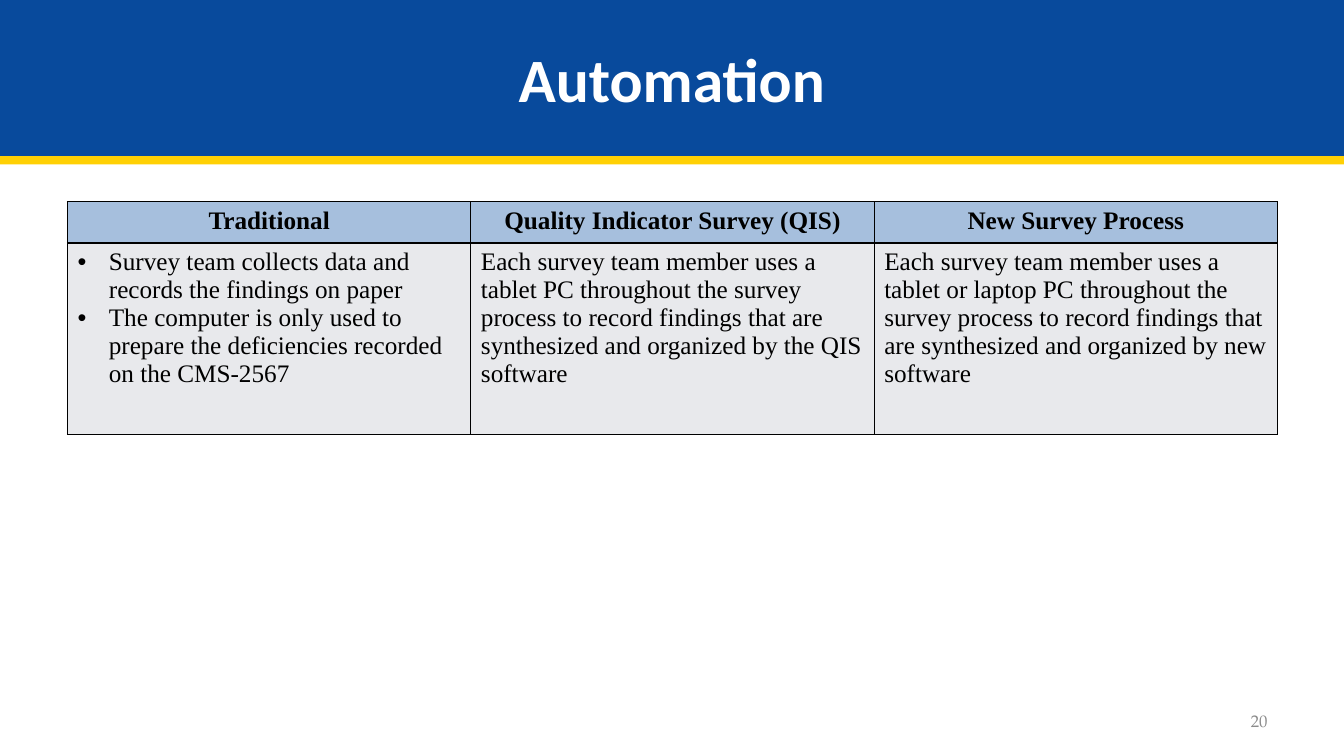
import pptx
import pptx.util
import pptx.dml.color
import pptx.enum.shapes
import pptx.enum.text
import pptx.oxml
import pptx.oxml.ns

Inches = pptx.util.Inches
Pt = pptx.util.Pt
ALIGN = pptx.enum.text.PP_ALIGN
MIDDLE = pptx.enum.text.MSO_ANCHOR.MIDDLE

COLOURS = {
    "banner": "084A9C",
    "stripe": "FFD004",
    "header": "A6BFDD",
    "body": "E8E9EC",
    "ink": "000000",
    "white": "FFFFFF",
    "number": "8C8C8C",
}
TITLE_FORMAT = {"name": "Calibri", "size": Pt(44), "bold": True}
HEADER_FORMAT = {"name": "Times New Roman", "size": Pt(18), "bold": True}
BODY_FORMAT = {**HEADER_FORMAT, "bold": False}
NUMBER_FORMAT = {"name": "TeX Gyre Pagella", "size": Pt(12), "bold": False}

SURVEYS = {
    "Traditional": [
        "Survey team collects data and records the findings on paper",
        "The computer is only used to prepare the deficiencies recorded on the CMS-2567",
    ],
    "Quality Indicator Survey (QIS)": [
        "Each survey team member uses a tablet PC throughout the survey process "
        "to record findings that are synthesized and organized by the QIS software",
    ],
    "New Survey Process": [
        "Each survey team member uses a tablet or laptop PC throughout the survey process "
        "to record findings that are synthesized and organized by new software",
    ],
}


def colour(name):
    return pptx.dml.color.RGBColor.from_string(COLOURS[name])


def paint(target, name):
    target.fill.solid()
    target.fill.fore_color.rgb = colour(name)


def write(para, text, formats, ink, align):
    para.alignment = align
    span = para.add_run()
    span.text = text
    for key, value in formats.items():
        setattr(span.font, key, value)
    span.font.color.rgb = colour(ink)


def add_bullet(para):
    properties = para._p.get_or_add_pPr()
    properties.set("marL", str(Inches(0.31)))
    properties.set("indent", str(Inches(-0.31)))
    namespace = pptx.oxml.ns.nsdecls("a")
    for xml in (
        f'<a:buClr {namespace}><a:srgbClr val="{COLOURS["ink"]}"/></a:buClr>',
        f'<a:buFont {namespace} typeface="Arial"/>',
        f'<a:buChar {namespace} char="•"/>',
    ):
        properties.append(pptx.oxml.parse_xml(xml))


def add_borders(cell):
    properties = cell._tc.get_or_add_tcPr()
    for side in "LRTB":
        properties.append(pptx.oxml.parse_xml(
            f'<a:ln{side} {pptx.oxml.ns.nsdecls("a")} w="{Pt(1)}"><a:solidFill>'
            f'<a:srgbClr val="{COLOURS["ink"]}"/></a:solidFill></a:ln{side}>'))


def fill_cell(cell, lines, fill, formats, align):
    add_borders(cell)
    paint(cell, fill)
    frame = cell.text_frame
    for index, line in enumerate(lines):
        para = frame.add_paragraph() if index else frame.paragraphs[0]
        if len(lines) > 1:
            add_bullet(para)
        write(para, line, formats, "ink", align)


def add_banner(page, text, left, top, width, height):
    stripe = page.shapes.add_shape(
        pptx.enum.shapes.MSO_SHAPE.RECTANGLE, left, top + height, width, Inches(0.08))
    stripe.shadow.inherit = False
    paint(stripe, "stripe")
    stripe.line.fill.background()
    title = page.shapes.title
    title.left, title.top, title.width, title.height = left, top, width, height
    paint(title, "banner")
    title.text_frame.vertical_anchor = MIDDLE
    write(title.text_frame.paragraphs[0], text, TITLE_FORMAT, "white", ALIGN.CENTER)


def add_comparison(page, surveys, left, top, width, height):
    table = page.shapes.add_table(2, len(surveys), left, top, width, height).table
    table.rows[0].height = Inches(0.41)
    table.rows[1].height = height - Inches(0.41)
    for column, (heading, lines) in enumerate(surveys.items()):
        table.columns[column].width = width // len(surveys)
        fill_cell(table.cell(0, column), [heading], "header", HEADER_FORMAT, ALIGN.CENTER)
        fill_cell(table.cell(1, column), lines, "body", BODY_FORMAT, ALIGN.LEFT)


def add_page_number(page, text, left, top, width, height):
    frame = page.shapes.add_textbox(left, top, width, height).text_frame
    frame.word_wrap = True
    frame.vertical_anchor = MIDDLE
    write(frame.paragraphs[0], text, NUMBER_FORMAT, "number", ALIGN.RIGHT)


def main():
    deck = pptx.Presentation()
    deck.slide_width, deck.slide_height = Inches(13.33), Inches(7.5)
    page = deck.slides.add_slide(deck.slide_layouts[5])
    add_banner(page, "Automation", 0, 0, deck.slide_width, Inches(1.55))
    add_comparison(page, SURVEYS, Inches(0.67), Inches(2), Inches(12), Inches(2.31))
    add_page_number(page, "20", Inches(9.56), Inches(6.95), Inches(3.11), Inches(0.4))
    deck.save("out.pptx")


if __name__ == "__main__":
    main()
